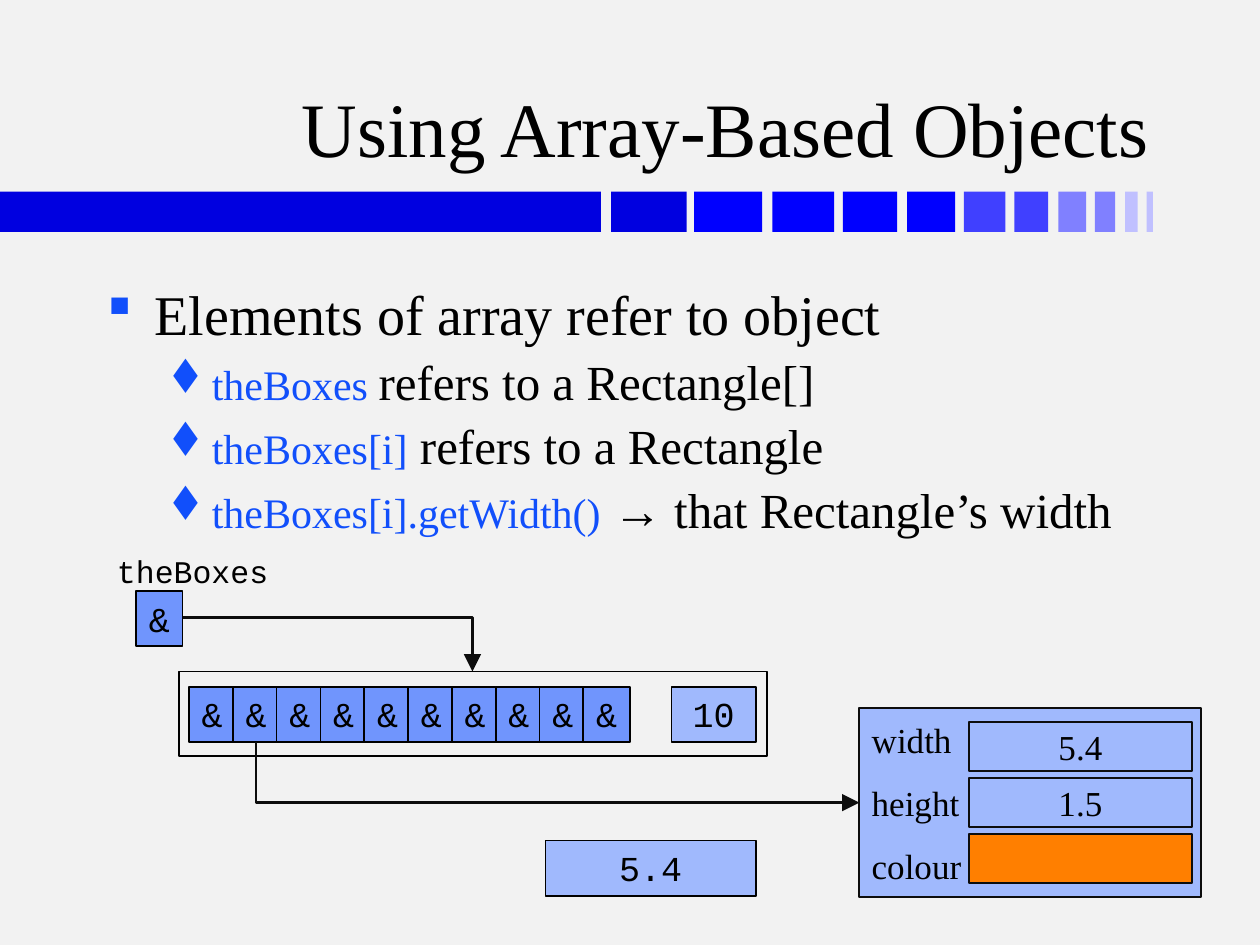
from dataclasses import dataclass

from lxml import etree
from pptx import Presentation
from pptx import util as u
from pptx.dml.color import RGBColor
from pptx.enum import shapes, text
from pptx.oxml import ns

SERIF, MONO, SYMBOLS = "Times New Roman", "Courier New", "Wingdings"
SQUARE, DIAMOND = "§", "t"  # positions in the symbol font
BLACK, INK, ACCENT = "000000", "0D0D0D", "114FFB"
REFERENCE, VALUE = "7095FD", "A0B9FD"


@dataclass
class Box:
    left: float
    top: float
    width: float
    height: float
    fill: str | None = None
    line: str | None = None
    lines: tuple[str, ...] = ()
    font: str = MONO
    size: int = 20
    align: text.PP_ALIGN = text.PP_ALIGN.CENTER
    anchor: text.MSO_ANCHOR = text.MSO_ANCHOR.TOP
    wrap: bool = True
    gap: int = 0


@dataclass
class Bullet:
    runs: tuple[tuple[str, int, str], ...]
    char: str = DIAMOND
    level: int = 1
    margin: float = 0.81
    hanging: float = 0.31
    before: int = 10


def rgb(value: str) -> RGBColor:
    return RGBColor.from_string(value)


def add_xml(parent, tag: str, **attributes: str):
    return etree.SubElement(parent, ns.qn(tag), attributes)


def set_font(font, name: str, size: int, colour: str = BLACK) -> None:
    font.name, font.size = name, u.Pt(size)
    font.color.rgb = rgb(colour)


def place(b: Box) -> tuple:
    return tuple(u.Inches(v) for v in (b.left, b.top, b.width, b.height))


def write(sp, b: Box) -> None:
    tf = sp.text_frame
    tf.word_wrap, tf.vertical_anchor = b.wrap, b.anchor
    for i, line in enumerate(b.lines):
        p = tf.paragraphs[0] if i == 0 else tf.add_paragraph()
        p.text, p.alignment = line, b.align
        p.space_before = p.space_after = u.Pt(b.gap)
        set_font(p.font, b.font, b.size)


def draw_box(s, b: Box) -> None:
    sp = s.shapes.add_shape(shapes.MSO_SHAPE.RECTANGLE, *place(b))
    sp.shadow.inherit = False
    if b.fill:
        sp.fill.solid()
        sp.fill.fore_color.rgb = rgb(b.fill)
    else:
        sp.fill.background()
    if b.line:
        sp.line.color.rgb = rgb(b.line)
        sp.line.width = u.Pt(1)
    else:
        sp.line.fill.background()
    write(sp, b)


def draw_label(s, b: Box) -> None:
    write(s.shapes.add_textbox(*place(b)), b)


def draw_bullets(s, b: Box, bullets: list[Bullet]) -> None:
    tf = s.shapes.add_textbox(*place(b)).text_frame
    tf.word_wrap = True
    for i, item in enumerate(bullets):
        p = tf.paragraphs[0] if i == 0 else tf.add_paragraph()
        p.level = item.level
        pPr = p._p.get_or_add_pPr()
        pPr.set("marL", str(u.Inches(item.margin)))
        pPr.set("indent", str(-u.Inches(item.hanging)))
        add_xml(add_xml(pPr, "a:spcBef"), "a:spcPct", val=str(item.before * 1000))
        add_xml(add_xml(pPr, "a:buClr"), "a:srgbClr", val=ACCENT)
        add_xml(pPr, "a:buFont", typeface=SYMBOLS, pitchFamily="2", charset="2")
        add_xml(pPr, "a:buChar", char=item.char)
        p.font.name = b.font
        for words, size, colour in item.runs:
            r = p.add_run()
            r.text = words
            r.font.size = u.Pt(size)
            r.font.color.rgb = rgb(colour)


def draw_arrow(s, start: tuple[float, float], end: tuple[float, float],
               down_first: bool = False) -> None:
    """One-bend arrow to the lower right; turned on its side to go down first."""
    (x1, y1), (x2, y2) = start, end
    if down_first:
        cx, cy, w, h = (x1 + x2) / 2, (y1 + y2) / 2, y2 - y1, x2 - x1
        x1, y1, x2, y2 = cx - w / 2, cy - h / 2, cx + w / 2, cy + h / 2
    c = s.shapes.add_connector(shapes.MSO_CONNECTOR.ELBOW,
                               *(u.Inches(v) for v in (x1, y1, x2, y2)))
    c.line.color.rgb = rgb(INK)
    c.line.width = u.Pt(1.5)
    spPr = c._element.spPr
    spPr.find(ns.qn("a:prstGeom")).set("prst", "bentConnector2")
    if down_first:
        xfrm = spPr.find(ns.qn("a:xfrm"))
        xfrm.set("rot", str(270 * 60000))
        xfrm.set("flipH", "1")
    add_xml(spPr.find(ns.qn("a:ln")), "a:tailEnd", type="triangle", w="lg", len="lg")
    add_xml(spPr, "a:effectLst")


def reference(left: float, top: float) -> Box:
    return Box(left, top, 0.37, 0.44, REFERENCE, BLACK, ("&",), wrap=False)


def field(row: int, fill: str, *lines: str) -> Box:
    return Box(7.69, 5.73 + row * 0.445, 1.77, 0.39, fill, INK, lines,
               SERIF, anchor=text.MSO_ANCHOR.MIDDLE)


def main() -> None:
    prs = Presentation()
    prs.slide_width, prs.slide_height = u.Inches(10), u.Inches(7.5)
    s = prs.slides.add_slide(prs.slide_layouts[6])
    s.background.fill.solid()
    s.background.fill.fore_color.rgb = rgb("F2F2F2")

    # Fading band under the title
    band = [(0, 4.77, "0000E0"), (4.85, 0.6, "0000E0"), (5.51, 0.54, "0000FF"),
            (6.13, 0.49, "0000FF"), (6.69, 0.43, "0000FF"), (7.2, 0.38, "0000FF"),
            (7.65, 0.33, "4040FF"), (8.05, 0.27, "4040FF"), (8.4, 0.22, "8080FF"),
            (8.69, 0.16, "8080FF"), (8.93, 0.1, "C0C0FF"), (9.1, 0.05, "C0C0FF")]
    for left, width, colour in band:
        draw_box(s, Box(left, 1.52, width, 0.32, colour))

    # Title and bullets
    draw_label(s, Box(0.74, 0.19, 8.48, 1.23, lines=("Using Array-Based Objects",),
                      font=SERIF, size=44, align=text.PP_ALIGN.RIGHT,
                      anchor=text.MSO_ANCHOR.BOTTOM))
    details = [("theBoxes ", "refers to a Rectangle[]"),
               ("theBoxes[i]", " refers to a Rectangle"),
               ("theBoxes[i].getWidth()", " → that Rectangle’s width")]
    heading = Bullet((("Elements of array refer to object", 32, BLACK),),
                     SQUARE, 0, 0.38, 0.38, 20)
    draw_bullets(s, Box(0.75, 2.17, 8.5, 4.5, font=SERIF),
                 [heading] + [Bullet(((code, 24, ACCENT), (rest, 28, BLACK)))
                              for code, rest in details])

    # Rectangle object and its fields
    draw_box(s, Box(6.82, 5.62, 2.71, 1.5, VALUE, INK, ("width", "height", "colour"),
                    SERIF, align=text.PP_ALIGN.LEFT,
                    anchor=text.MSO_ANCHOR.MIDDLE, gap=6))
    draw_box(s, field(0, VALUE, "5.4"))
    draw_box(s, field(1, VALUE, "1.5"))
    draw_box(s, field(2, "FF7F00"))

    # Array variable
    draw_box(s, reference(1.08, 4.69))
    draw_label(s, Box(0.83, 4.33, 1.41, 0.4, lines=("theBoxes",), size=18,
                      align=text.PP_ALIGN.LEFT, wrap=False))

    # Array object: ten references and the length
    draw_box(s, Box(1.42, 5.33, 4.67, 0.67, line=BLACK))
    for i in range(10):
        draw_box(s, reference(1.5 + i * 3.13 / 9, 5.45))
    draw_box(s, Box(5.33, 5.45, 0.67, 0.44, VALUE, BLACK, ("10",)))

    # Returned width
    draw_box(s, Box(4.33, 6.67, 1.67, 0.44, VALUE, BLACK, ("5.4",)))

    # Reference arrows
    draw_arrow(s, (1.45, 4.9), (3.75, 5.33))
    draw_arrow(s, (2.03, 5.89), (6.82, 6.37), down_first=True)

    prs.save("out.pptx")


if __name__ == "__main__":
    main()
